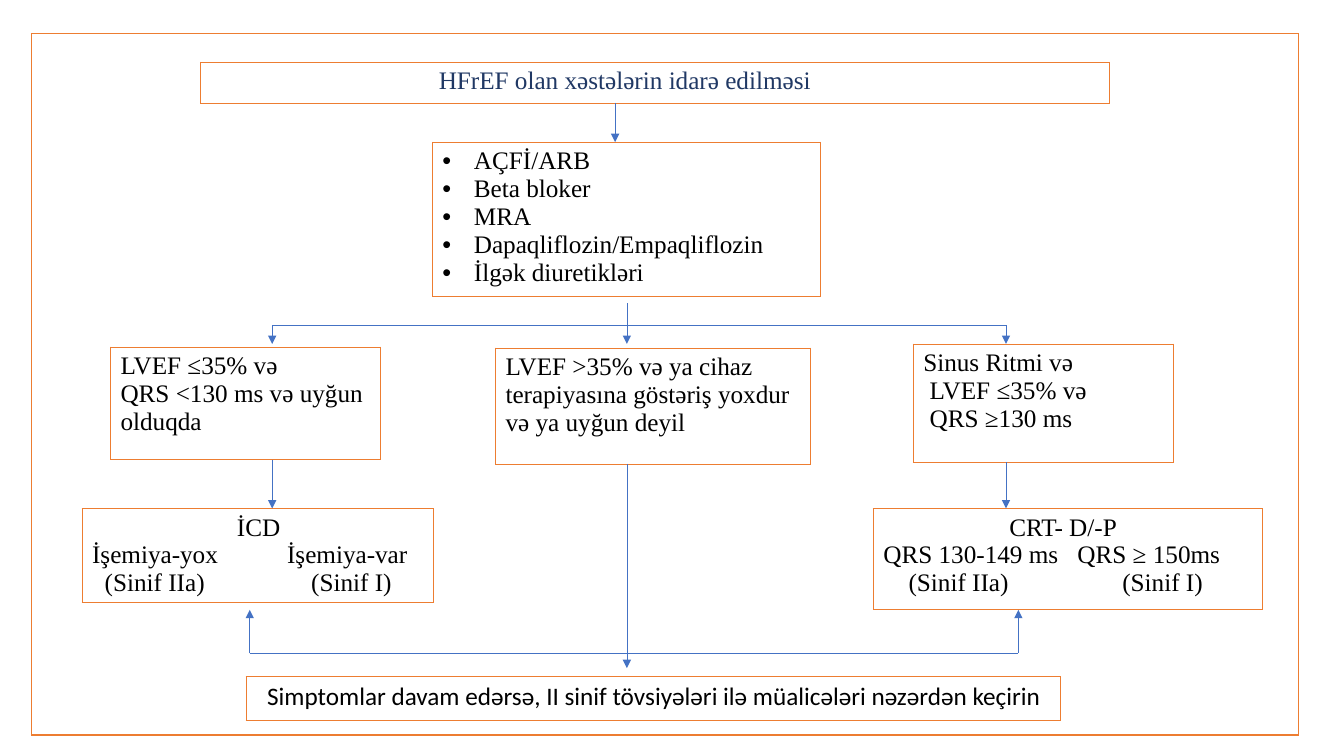
from dataclasses import dataclass

from lxml.etree import SubElement
from pptx import Presentation
from pptx.dml.color import RGBColor
from pptx.enum.shapes import MSO_CONNECTOR
from pptx.oxml import parse_xml
from pptx.oxml.ns import nsdecls, qn
from pptx.util import Pt

COLORS = {"border": "ED7D31", "arrow": "4472C4", "text": "000000", "title": "203864"}
SERIF = "Times New Roman"
SANS = "Calibri"
TEXT_SIZE = 18
BULLET_INDENT = 22.5

LEFT_AXIS, MIDDLE_AXIS, RIGHT_AXIS = 194.4, 447.8, 718.6
BRANCH_TOP = 232.4


@dataclass
class Line:
    """One paragraph with its left indent, tab stops and optional bullet, in points."""
    text: str
    indent: float = 0
    stops: tuple = ()
    bullet: bool = False


def add_border(cell, width):
    properties = cell._tc.get_or_add_tcPr()
    for position, side in enumerate(("lnL", "lnR", "lnT", "lnB")):
        border = parse_xml(
            f'<a:{side} {nsdecls("a")} w="{Pt(width)}"><a:solidFill>'
            f'<a:srgbClr val="{COLORS["border"]}"/></a:solidFill></a:{side}>')
        properties.insert(position, border)


def format_line(paragraph, line, font_name, color):
    paragraph.text = line.text
    properties = paragraph._p.get_or_add_pPr()
    if line.indent:
        properties.set("marL", str(Pt(line.indent)))
    if line.bullet:
        properties.set("indent", str(-Pt(line.indent)))
        SubElement(properties, qn("a:buFont"), typeface="Arial")
        SubElement(properties, qn("a:buChar"), char="•")
    if line.stops:
        tabs = SubElement(properties, qn("a:tabLst"))
        for stop in line.stops:
            SubElement(tabs, qn("a:tab"), pos=str(Pt(stop)), algn="l")
    for run in paragraph.runs:
        run.font.size = Pt(TEXT_SIZE)
        run.font.name = font_name
        run.font.bold = False
        run.font.color.rgb = RGBColor.from_string(COLORS[color])


def add_box(slide, box, lines=(), font_name=SERIF, color="text", border=0.5):
    """Place a one-cell table holding the given lines."""
    table = slide.shapes.add_table(1, 1, *(Pt(value) for value in box)).table
    table.first_row = False
    table.horz_banding = False
    cell = table.cell(0, 0)
    cell.fill.background()
    add_border(cell, border)
    text_frame = cell.text_frame
    for index, line in enumerate(lines):
        paragraph = text_frame.add_paragraph() if index else text_frame.paragraphs[0]
        format_line(paragraph, line, font_name, color)


def add_line(slide, start, end, arrow=False):
    connector = slide.shapes.add_connector(
        MSO_CONNECTOR.STRAIGHT, *(Pt(value) for value in (*start, *end)))
    connector.line.color.rgb = RGBColor.from_string(COLORS["arrow"])
    connector.line.width = Pt(0.5)
    if arrow:
        SubElement(connector.line._get_or_add_ln(), qn("a:tailEnd"), type="triangle")
    SubElement(connector._element.spPr, qn("a:effectLst"))


def add_first_line_treatment(slide, title_box, drugs_box):
    add_box(slide, title_box, [Line("HFrEF olan xəstələrin idarə edilməsi", 163)],
            color="title")
    drugs = ("AÇFİ/ARB", "Beta bloker", "MRA", "Dapaqliflozin/Empaqliflozin",
             "İlgək diuretikləri")
    add_box(slide, drugs_box, [Line(drug, BULLET_INDENT, bullet=True) for drug in drugs])
    arrow_x = 439.4
    add_line(slide, (arrow_x, title_box[1] + title_box[3]), (arrow_x, drugs_box[1]), True)


def add_conditions(slide, low_box, high_box, sinus_box):
    add_box(slide, low_box, [Line("LVEF ≤35% və"), Line("QRS <130 ms və uyğun olduqda")])
    add_box(slide, high_box, [
        Line("LVEF >35% və ya cihaz terapiyasına göstəriş yoxdur və ya uyğun deyil")])
    add_box(slide, sinus_box, [Line("Sinus Ritmi və"), Line("LVEF ≤35% və", 4.5),
                               Line("QRS ≥130 ms", 4.5)])
    add_line(slide, (MIDDLE_AXIS, 216.7), (MIDDLE_AXIS, BRANCH_TOP))
    add_line(slide, (LEFT_AXIS, BRANCH_TOP), (RIGHT_AXIS, BRANCH_TOP))
    for axis in (LEFT_AXIS, MIDDLE_AXIS, RIGHT_AXIS):
        add_line(slide, (axis, BRANCH_TOP), (axis, sinus_box[1]), True)


def add_device(slide, box, heading, options, classes, axis, condition_bottom):
    """Place a device box and the arrow that leads down to it."""
    add_box(slide, box, [heading, options, classes])
    add_line(slide, (axis, condition_bottom), (axis, box[1]), True)


def add_follow_up(slide, box, left_x, right_x, devices_bottom, condition_bottom):
    add_box(slide, box, [
        Line("Simptomlar davam edərsə, II sinif tövsiyələri ilə müalicələri "
             "nəzərdən keçirin", 8)], SANS)
    loop_y = box[1] - 16.6
    add_line(slide, (left_x, loop_y), (right_x, loop_y))
    for x in (left_x, right_x):
        add_line(slide, (x, loop_y), (x, devices_bottom), True)
    add_line(slide, (MIDDLE_AXIS, condition_bottom), (MIDDLE_AXIS, box[1] - 6), True)


def main():
    presentation = Presentation()
    presentation.slide_width = Pt(960)
    presentation.slide_height = Pt(540)
    slide = presentation.slides.add_slide(presentation.slide_layouts[6])

    low_box = (78.9, 247.9, 192.5, 80.4)
    high_box = (353.9, 248.6, 225, 82.8)
    sinus_box = (652.3, 245.7, 185.8, 84.5)

    add_box(slide, (22.5, 24, 905, 501), border=1)
    add_first_line_treatment(slide, (143.2, 44.5, 649.5, 29), (308.8, 101.5, 277.2, 110.2))
    add_conditions(slide, low_box, high_box, sinus_box)
    add_device(slide, (58.6, 363.2, 251, 67), Line("İCD", 103.5),
               Line("İşemiya-yox\tİşemiya-var", stops=(139.3,)),
               Line("\t(Sinif IIa)\t(Sinif I)", stops=(9, 156.5)),
               LEFT_AXIS, low_box[1] + low_box[3])
    add_device(slide, (623.8, 363.2, 278, 72), Line("CRT- D/-P", 90),
               Line("QRS 130-149 ms\tQRS ≥ 150ms", stops=(138.6,)),
               Line("\t(Sinif IIa)\t(Sinif I)", stops=(18, 170.7)),
               RIGHT_AXIS, sinus_box[1] + sinus_box[3])
    add_follow_up(slide, (175.6, 483.2, 582, 31), 178.4, 727.4, 435.6,
                  high_box[1] + high_box[3])
    presentation.save("out.pptx")


if __name__ == "__main__":
    main()
